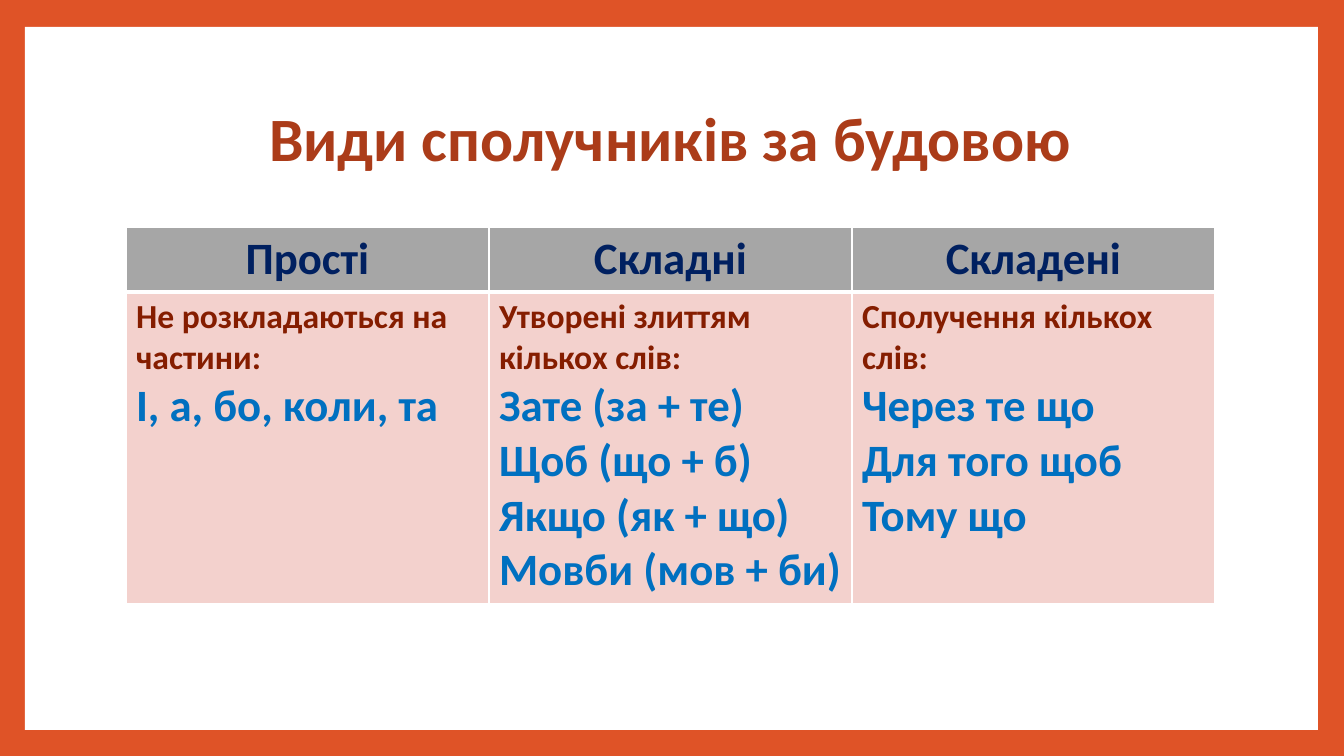
"""Build a slide with a table of Ukrainian conjunction types by structure."""
import lxml.etree
import pptx
import pptx.dml.color
import pptx.enum.shapes
import pptx.enum.text
import pptx.oxml.ns
import pptx.util

THEME = {
    "font": "Calibri",
    "frame": "DF5327",
    "paper": "FFFFFF",
    "header_fill": "A6A6A6",
    "body_fill": "F3D1CD",
    "title": {"size": 44, "color": "AB3C19"},
    "header": {"size": 32, "color": "002060"},
    "definition": {"size": 24, "color": "851D00"},
    "example": {"size": 32, "color": "0070C0"},
}
EMU_PER_PX = 914400 / 100.8
CENTER = pptx.enum.text.PP_ALIGN.CENTER
LEFT = pptx.enum.text.PP_ALIGN.LEFT
COLUMNS = [
    ("Прості", "Не розкладаються на частини:", ["І, а, бо, коли, та"]),
    ("Складні", "Утворені злиттям кількох слів:",
     ["Зате (за + те)", "Щоб (що + б)", "Якщо (як + що)", "Мовби (мов + би)"]),
    ("Складені", "Сполучення кількох слів:",
     ["Через те що", "Для того щоб", "Тому що"]),
]
ROW_HEIGHTS = [65, 310]
COLUMN_WIDTH = 363


def px(length):
    return pptx.util.Emu(round(length * EMU_PER_PX))


def write(frame, lines, alignment):
    for index, (text, style) in enumerate(lines):
        para = frame.paragraphs[0] if index == 0 else frame.add_paragraph()
        para.alignment = alignment
        span = para.add_run()
        span.text = text
        values = {"name": THEME["font"], "bold": True,
                  "size": pptx.util.Pt(THEME[style]["size"])}
        for name, value in values.items():
            setattr(span.font, name, value)
        span.font.color.rgb = pptx.dml.color.RGBColor.from_string(THEME[style]["color"])


deck = pptx.Presentation()
deck.slide_width, deck.slide_height = px(1344), px(756)
page = deck.slides.add_slide(deck.slide_layouts[5])
page.background.fill.solid()
page.background.fill.fore_color.rgb = pptx.dml.color.RGBColor.from_string(THEME["frame"])

paper = page.shapes.add_shape(
    pptx.enum.shapes.MSO_SHAPE.RECTANGLE, px(25), px(27), px(1293), px(703))
paper.shadow.inherit = False
paper.fill.solid()
paper.fill.fore_color.rgb = pptx.dml.color.RGBColor.from_string(THEME["paper"])
paper.line.fill.background()
page.shapes._spTree.insert(2, paper._element)

title = page.shapes.title
for name, value in {"left": 126, "top": 67, "width": 1089, "height": 149}.items():
    setattr(title, name, px(value))
title.text_frame.word_wrap = True
title.text_frame.vertical_anchor = pptx.enum.text.MSO_ANCHOR.MIDDLE
write(title.text_frame, [("Види сполучників за будовою", "title")], CENTER)
title.text_frame.paragraphs[0].line_spacing = 0.9

table = page.shapes.add_table(
    len(ROW_HEIGHTS), len(COLUMNS), px(126), px(227),
    px(COLUMN_WIDTH * len(COLUMNS)), px(sum(ROW_HEIGHTS))).table
table.first_row = True
table.horz_banding = False
for row, height in zip(table.rows, ROW_HEIGHTS):
    row.height = px(height)

for column, (heading, definition, examples) in enumerate(COLUMNS):
    table.columns[column].width = px(COLUMN_WIDTH)
    body_lines = [(definition, "definition")] + [(text, "example") for text in examples]
    cells = [
        ([(heading, "header")], CENTER, "header_fill", {"L": 1, "R": 1, "T": 1, "B": 3}),
        (body_lines, LEFT, "body_fill", {"L": 1, "R": 1, "T": 3, "B": 1}),
    ]
    for row, (lines, alignment, fill, borders) in enumerate(cells):
        cell = table.cell(row, column)
        write(cell.text_frame, lines, alignment)
        properties = cell._tc.get_or_add_tcPr()
        for side, width in borders.items():
            line = lxml.etree.SubElement(
                properties, pptx.oxml.ns.qn(f"a:ln{side}"), w=str(pptx.util.Pt(width)))
            solid = lxml.etree.SubElement(line, pptx.oxml.ns.qn("a:solidFill"))
            lxml.etree.SubElement(solid, pptx.oxml.ns.qn("a:srgbClr"), val=THEME["paper"])
        cell.fill.solid()
        cell.fill.fore_color.rgb = pptx.dml.color.RGBColor.from_string(THEME[fill])

deck.save("out.pptx")
